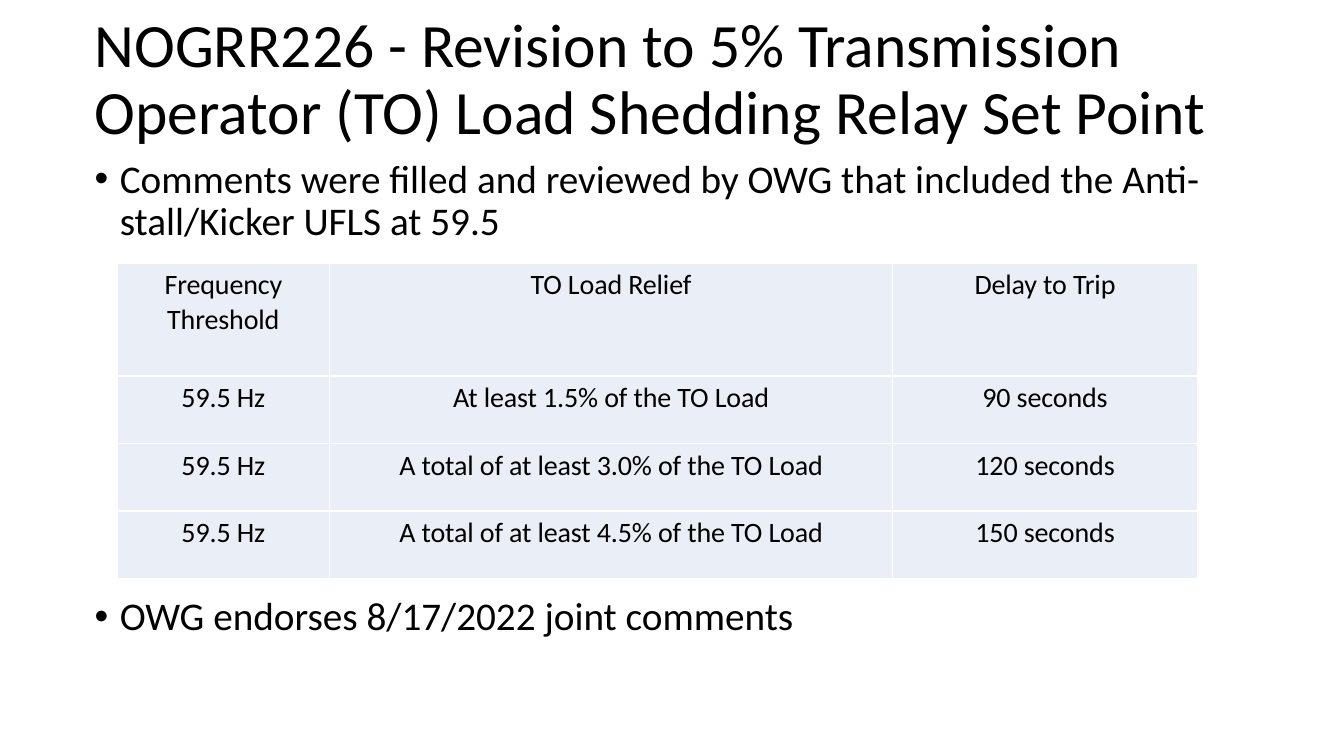
from lxml.etree import SubElement
from pptx import Presentation
from pptx.dml.color import RGBColor
from pptx.enum.text import MSO_ANCHOR, PP_ALIGN
from pptx.oxml.ns import qn
from pptx.util import Pt

EMU_PER_PX = 9144  # 100 px to the inch
BLACK = RGBColor(0x00, 0x00, 0x00)
WHITE = RGBColor(0xFF, 0xFF, 0xFF)
PALE_BLUE = RGBColor(0xEA, 0xEF, 0xF7)

TITLE = "NOGRR226 - Revision to 5% Transmission Operator (TO) Load Shedding Relay Set Point"
# Each bullet with its space before, in points; the second clears the table
BULLETS = [
    ("Comments were filled and reviewed by OWG that included the Anti-stall/Kicker UFLS at 59.5", 10),
    ("OWG endorses 8/17/2022 joint comments", 252),
]
RELAY_ROWS = [
    ("Frequency Threshold", "TO Load Relief", "Delay to Trip"),
    ("59.5 Hz", "At least 1.5% of the TO Load", "90 seconds"),
    ("59.5 Hz", "A total of at least 3.0% of the TO Load", "120 seconds"),
    ("59.5 Hz", "A total of at least 4.5% of the TO Load", "150 seconds"),
]


def px(length):
    return length * EMU_PER_PX


def apply(target, values):
    for name, value in values.items():
        setattr(target, name, value)


class SlideBuilder:
    font_name = "Calibri"

    def __init__(self, slide):
        self.slide = slide

    def add_text(self, paragraph, text, size, **formats):
        apply(paragraph, formats)
        run = paragraph.add_run()
        run.text = text
        apply(run.font, {"name": self.font_name, "size": Pt(size), "bold": False})
        run.font.color.rgb = BLACK
        return run

    def text_box(self, box, anchor):
        frame = self.slide.shapes.add_textbox(*map(px, box)).text_frame
        apply(frame, {"word_wrap": True, "vertical_anchor": anchor})
        return frame

    def title(self, text, box):
        frame = self.text_box(box, MSO_ANCHOR.MIDDLE)
        self.add_text(frame.paragraphs[0], text, 44, line_spacing=0.9)

    def bullets(self, items, box):
        frame = self.text_box(box, MSO_ANCHOR.TOP)
        for index, (text, space) in enumerate(items):
            paragraph = frame.add_paragraph() if index else frame.paragraphs[0]
            self.add_text(paragraph, text, 28, line_spacing=0.9, space_before=Pt(space))
            properties = paragraph._p.get_or_add_pPr()
            properties.set("marL", str(px(25)))
            properties.set("indent", str(px(-25)))
            SubElement(properties, qn("a:buFont"), typeface="Arial")
            SubElement(properties, qn("a:buChar"), char="•")

    def borders(self, cell):
        properties = cell._tc.get_or_add_tcPr()
        for side in ("lnL", "lnR", "lnT", "lnB"):
            line = SubElement(properties, qn(f"a:{side}"), w=str(Pt(1)))
            fill = SubElement(line, qn("a:solidFill"))
            SubElement(fill, qn("a:srgbClr"), val=str(WHITE))

    def table(self, rows, left, top, widths, heights):
        table = self.slide.shapes.add_table(
            len(rows), len(widths), px(left), px(top), px(sum(widths)), px(sum(heights))
        ).table
        apply(table, {"first_row": False, "horz_banding": False})
        for column, width in zip(table.columns, widths):
            column.width = px(width)
        for row, height, texts in zip(table.rows, heights, rows):
            row.height = px(height)
            for cell, text in zip(row.cells, texts):
                apply(cell, {"margin_left": px(8), "margin_right": px(8),
                             "margin_top": px(5), "margin_bottom": px(5)})
                self.borders(cell)
                cell.fill.solid()
                cell.fill.fore_color.rgb = PALE_BLUE
                run = self.add_text(cell.text_frame.paragraphs[0], text, 20, alignment=PP_ALIGN.CENTER)
                run._r.get_or_add_rPr().set("spc", "-10")


def main():
    presentation = Presentation()
    apply(presentation, {"slide_width": px(1333), "slide_height": px(750)})
    builder = SlideBuilder(presentation.slides.add_slide(presentation.slide_layouts[6]))

    # Heading and bullets
    builder.title(TITLE, (84, 8, 1150, 145))
    builder.bullets(BULLETS, (84, 153, 1150, 572))

    # Relay set points
    builder.table(RELAY_ROWS, 116, 261, widths=(211, 558, 303), heights=(112, 67, 67, 67))

    presentation.save("out.pptx")


if __name__ == "__main__":
    main()
